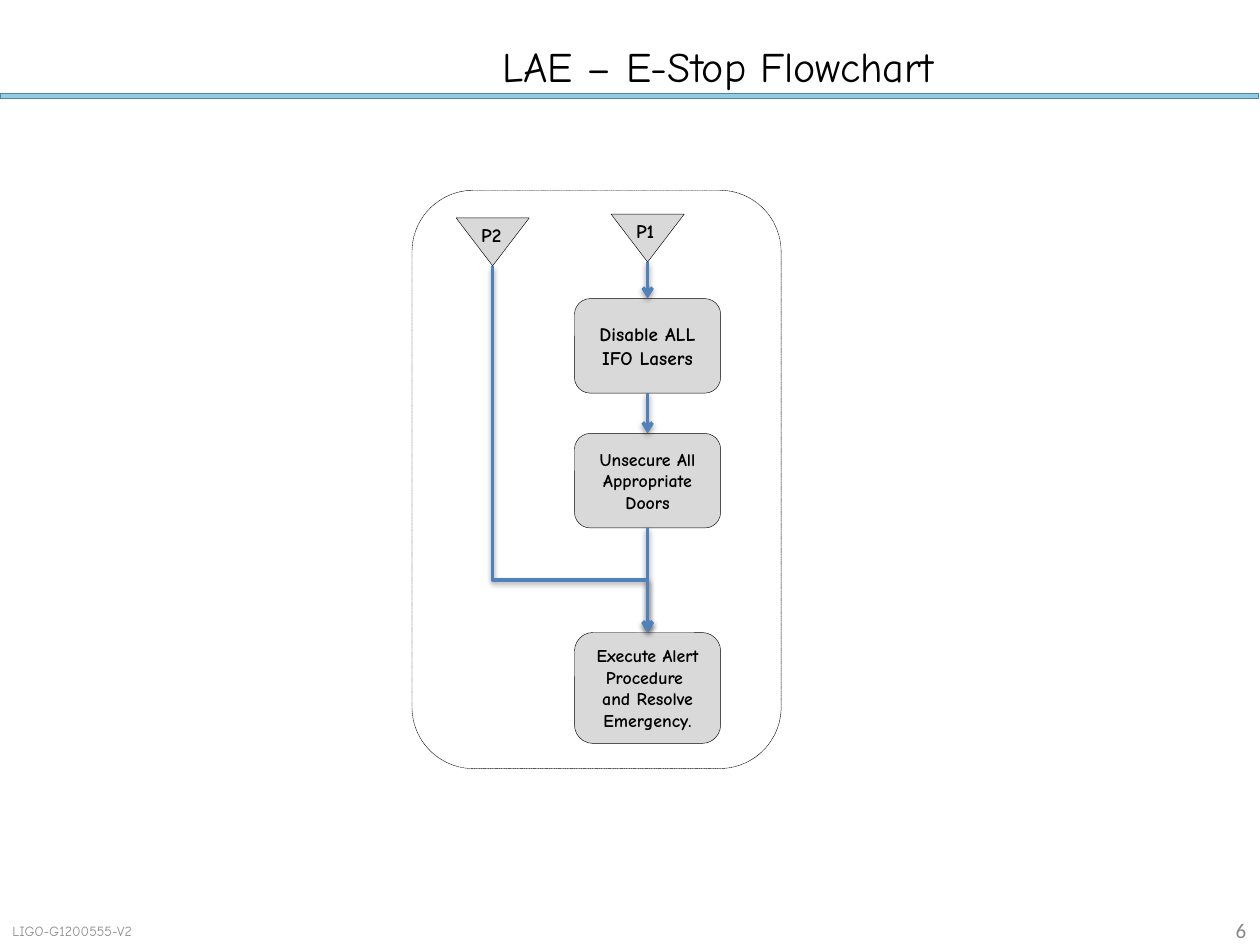
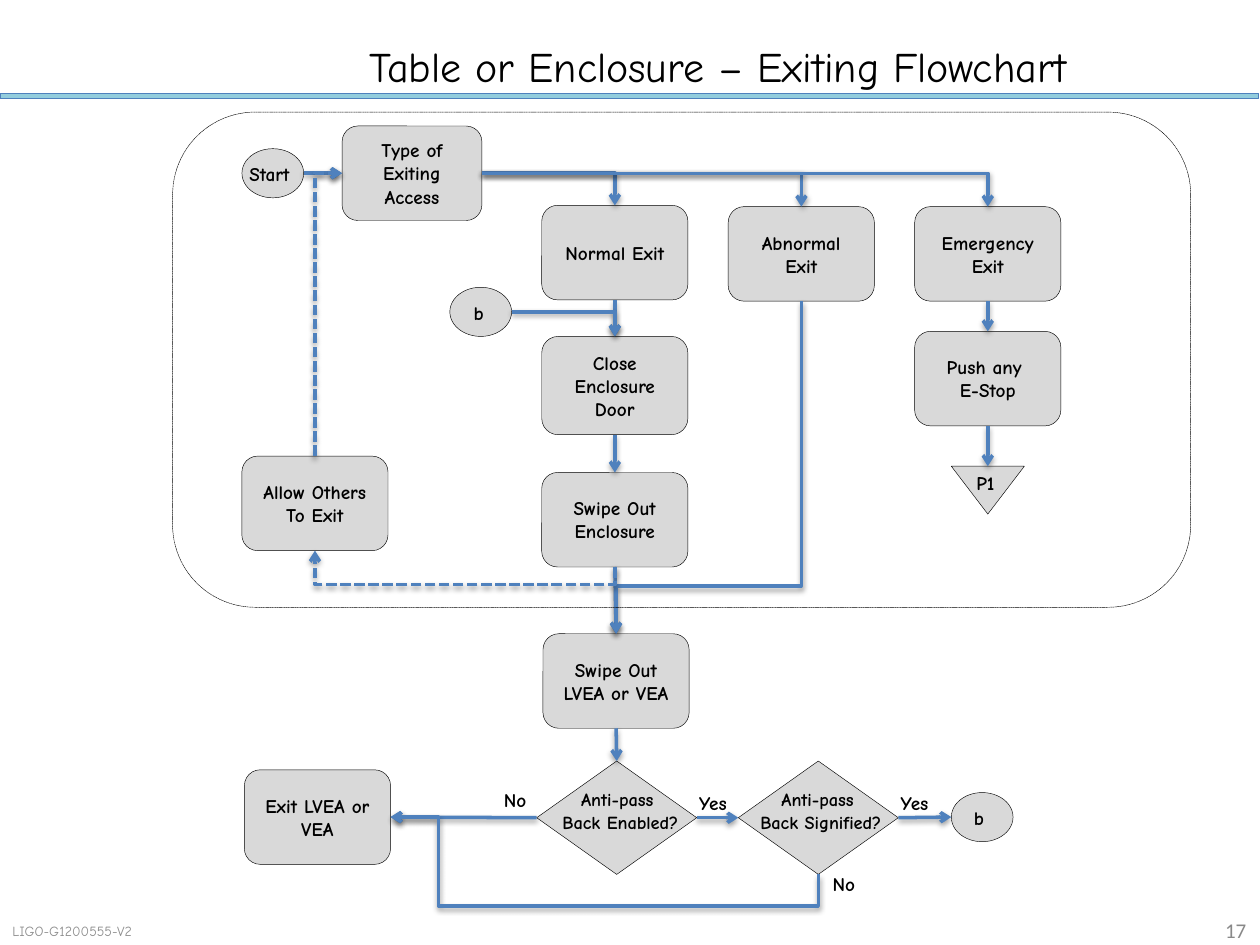
import collections

import lxml.etree
import pptx
import pptx.dml.color
import pptx.enum.dml
import pptx.enum.shapes
import pptx.enum.text
import pptx.oxml.ns
import pptx.util

SHAPE = pptx.enum.shapes.MSO_SHAPE
CONNECTOR = pptx.enum.shapes.MSO_CONNECTOR
ALIGN = pptx.enum.text.PP_ALIGN
ANCHOR = pptx.enum.text.MSO_ANCHOR
DASH = pptx.enum.dml.MSO_LINE.SQUARE_DOT
qn = pptx.oxml.ns.qn

COLUMNS, ROWS = 10, 7.5
BLACK, GREY, BLUE, SKY = "000000", "D9D9D9", "4F81BD", "93CDDD"
HAND, PLAIN = "Comic Neue", "Calibri"

Node = collections.namedtuple("Node", "left top right bottom")


def color(hex_string):
    return pptx.dml.color.RGBColor.from_string(hex_string)


class Flowchart:
    def __init__(self, deck):
        self.deck = deck
        self.slide = None

    def x(self, columns):
        return round(self.deck.slide_width * columns / COLUMNS)

    def y(self, rows):
        return round(self.deck.slide_height * rows / ROWS)

    def area(self, left, top, width, height):
        return self.x(left), self.y(top), self.x(width), self.y(height)

    def typeset(self, frame, text, size, hue=BLACK, font=HAND, bold=False,
                align=ALIGN.LEFT, anchor=ANCHOR.TOP, wrap=True):
        frame.text = text
        frame.word_wrap = wrap
        frame.vertical_anchor = anchor
        for paragraph in frame.paragraphs:
            paragraph.alignment = align
            for run in paragraph.runs:
                run.font.size = pptx.util.Pt(size)
                run.font.name = font
                run.font.bold = bold
                run.font.color.rgb = color(hue)

    def page(self, title, number):
        self.slide = self.deck.slides.add_slide(self.deck.slide_layouts[5])
        heading = self.slide.shapes.title
        heading.left, heading.top, heading.width, heading.height = self.area(1.89, 0.3, 7.61, 0.44)
        self.typeset(heading.text_frame, title, 24, align=ALIGN.CENTER, anchor=ANCHOR.MIDDLE)
        heading.text_frame.auto_size = pptx.enum.text.MSO_AUTO_SIZE.NONE
        self.shape(SHAPE.RECTANGLE, 0, 0.74, 9.99, 0.04, SKY, BLUE, 0.75)
        self.label(number, 9.26, 7.27, 0.73, 0.22, 12, hue="898989", font=PLAIN,
                   bold=False, align=ALIGN.RIGHT, anchor=ANCHOR.MIDDLE)
        self.label("LIGO-G1200555-V2", 0, 7.29, 1.39, 0.2, 8, hue="8C8C8C",
                   bold=False, anchor=ANCHOR.MIDDLE)

    def shape(self, kind, left, top, width, height, fill=GREY, line=BLACK, weight=0.25):
        shape = self.slide.shapes.add_shape(kind, *self.area(left, top, width, height))
        shape.shadow.inherit = False
        if fill:
            shape.fill.solid()
            shape.fill.fore_color.rgb = color(fill)
        else:
            shape.fill.background()
        shape.line.color.rgb = color(line)
        shape.line.width = pptx.util.Pt(weight)
        return shape

    def frame(self, left, top, width, height):
        border = self.shape(SHAPE.ROUNDED_RECTANGLE, left, top, width, height, fill=None)
        border.line.dash_style = DASH

    def label(self, text, left, top, width, height=0.29, size=11, bold=True, **style):
        box = self.slide.shapes.add_textbox(*self.area(left, top, width, height))
        self.typeset(box.text_frame, text, size, bold=bold, **style)

    def step(self, text, middle, top, width=1.16, height=0.75, size=11):
        left = middle - width / 2
        box = self.shape(SHAPE.ROUNDED_RECTANGLE, left, top, width, height)
        self.typeset(box.text_frame, text, size, bold=True, align=ALIGN.CENTER,
                     anchor=ANCHOR.MIDDLE)
        return self.node(left, top, width, height)

    def node(self, left, top, width, height):
        middle, center = left + width / 2, top + height / 2
        return Node((left, center), (middle, top), (left + width, center), (middle, top + height))

    def jump(self, text, middle, top):
        self.shape(SHAPE.FLOWCHART_MERGE, middle - 0.29, top, 0.58, 0.38)
        self.label(text, middle - 0.19, top - 0.01, 0.52)
        return self.node(middle - 0.29, top, 0.58, 0.38)

    def terminal(self, text, left, top, indent, width):
        self.shape(SHAPE.OVAL, left, top, 0.49, 0.39)
        self.label(text, left + indent, top + 0.06, width, wrap=False)
        return self.node(left, top, 0.49, 0.39)

    def decision(self, text, left, label_left, label_width):
        self.shape(SHAPE.DIAMOND, left, 6.04, 1.27, 0.9)
        self.label(text, label_left, 6.21, label_width, 0.45, 10.5, align=ALIGN.CENTER, wrap=False)
        return self.node(left, 6.04, 1.27, 0.9)

    def link(self, *points, dashed=False):
        (x0, y0), (x1, y1) = points[0], points[-1]
        bends = len(points) - 2
        upright = bends > 0 and abs(points[1][0] - x0) < 0.01
        along, across = (y1 - y0, x0 - x1) if upright else (x1 - x0, y1 - y0)
        middle, center = (x0 + x1) / 2, (y0 + y1) / 2
        arrow = self.slide.shapes.add_connector(
            CONNECTOR.ELBOW if bends else CONNECTOR.STRAIGHT,
            self.x(middle - along / 2), self.y(center - across / 2),
            self.x(middle + along / 2), self.y(center + across / 2))
        if upright:
            arrow.rotation = 90
        if bends:
            self.bend(arrow, points, bends, upright)
        arrow.line.color.rgb = color(BLUE)
        arrow.line.width = pptx.util.Pt(2)
        if dashed:
            arrow.line.dash_style = DASH
        properties = arrow.element.spPr
        lxml.etree.SubElement(properties.find(qn("a:ln")), qn("a:tailEnd"), type="arrow")
        effects = lxml.etree.SubElement(properties, qn("a:effectLst"))
        shadow = lxml.etree.SubElement(effects, qn("a:outerShdw"), blurRad="40000", dist="20000",
                                       dir="5400000", rotWithShape="0")
        tint = lxml.etree.SubElement(shadow, qn("a:srgbClr"), val=BLACK)
        lxml.etree.SubElement(tint, qn("a:alpha"), val="38000")

    def bend(self, arrow, points, bends, upright):
        geometry = arrow.element.spPr.find(qn("a:prstGeom"))
        geometry.set("prst", f"bentConnector{bends + 1}")
        guides = geometry.find(qn("a:avLst"))
        if guides is None:
            guides = lxml.etree.SubElement(geometry, qn("a:avLst"))
        for turn in range(1, bends):
            axis = (turn + upright + 1) % 2
            start, end = points[0][axis], points[-1][axis]
            share = (points[turn][axis] - start) / (end - start)
            lxml.etree.SubElement(guides, qn("a:gd"), name=f"adj{turn}",
                                  fmla=f"val {round(share * 100000)}")


def emergency_stop(chart):
    chart.page("LAE – E-Stop Flowchart", "6")
    main_lane, bypass_lane = 5.14, 3.91
    disable = chart.step("Disable ALL IFO Lasers", main_lane, 2.37)
    unsecure = chart.step("Unsecure All Appropriate Doors", main_lane, 3.44, size=10.2)
    execute = chart.step("Execute Alert Procedure \nand Resolve Emergency.", main_lane, 5.02,
                         height=0.88, size=10.2)
    p1 = chart.jump("P1", main_lane, 1.7)
    p2 = chart.jump("P2", bypass_lane, 1.73)
    for source, target in ((p1, disable), (disable, unsecure), (unsecure, execute)):
        chart.link(source.bottom, target.top)
    chart.link(p2.bottom, (bypass_lane, 4.6), (main_lane, 4.6), execute.top)
    chart.frame(3.27, 1.51, 2.93, 4.59)


def exiting(chart):
    chart.page("Table or Enclosure – Exiting Flowchart", "17")
    main_lane, abnormal_lane, emergency_lane = (4.88 + 1.48 * lane for lane in range(3))
    side_lane, merge_row = 2.5, 4.65

    access = chart.step("Type of Exiting Access", 3.27, 1, width=1.11)
    normal = chart.step("Normal Exit", main_lane, 1.63)
    abnormal = chart.step("Abnormal Exit", abnormal_lane, 1.64)
    emergency = chart.step("Emergency Exit", emergency_lane, 1.64)
    close = chart.step("Close Enclosure Door", main_lane, 2.67, height=0.78)
    allow = chart.step("Allow Others To Exit", side_lane, 3.62)
    swipe_enclosure = chart.step("Swipe Out Enclosure", main_lane, 3.75)
    swipe_area = chart.step("Swipe Out LVEA or VEA", main_lane + 0.01, 5.03)
    leave = chart.step("Exit LVEA or VEA", side_lane + 0.02, 6.11)
    push = chart.step("Push any \nE-Stop", emergency_lane, 2.63)
    p1 = chart.jump("P1", emergency_lane, 3.7)
    start = chart.terminal("Start", 1.92, 1.18, -0.04, 0.61)
    b_in = chart.terminal("b", 3.57, 2.28, 0.09, 0.29)
    b_out = chart.terminal("b", 7.55, 6.29, 0.08, 0.29)
    enabled = chart.decision("Anti-pass \nBack Enabled?", 4.26, 4.31, 1.23)
    signified = chart.decision("Anti-pass \nBack Signified?", 5.86, 5.86, 1.31)

    for text, left, top, width in (("Yes", 5.45, 6.23, 0.52), ("Yes", 7.05, 6.23, 0.52),
                                   ("No", 3.9, 6.21, 0.41), ("No", 6.51, 6.87, 0.41)):
        chart.label(text, left, top, width, wrap=width > 0.5)

    for branch in (normal, abnormal, emergency):
        chart.link(access.right, (branch.top[0], access.right[1]), branch.top)
    for source, target in ((normal, close), (close, swipe_enclosure), (swipe_enclosure, swipe_area),
                           (swipe_area, enabled), (emergency, push), (push, p1)):
        chart.link(source.bottom, target.top)
    for source, target in ((start, access), (enabled, signified), (signified, b_out)):
        chart.link(source.right, target.left)
    chart.link(enabled.left, leave.right)
    chart.link(b_in.right, (main_lane, b_in.right[1]), close.top)
    chart.link(abnormal.bottom, (abnormal_lane, merge_row), (swipe_area.top[0], merge_row),
               swipe_area.top)
    chart.link(swipe_enclosure.bottom, (main_lane, merge_row - 0.01),
               (side_lane, merge_row - 0.01), allow.bottom, dashed=True)
    chart.link(allow.top, (side_lane, access.left[1]), access.left, dashed=True)
    chart.link(signified.bottom, (signified.bottom[0], 7.19), (3.48, 7.19),
               (3.48, leave.right[1]), leave.right)
    chart.frame(1.37, 0.89, 8.08, 3.93)


def main():
    deck = pptx.Presentation()
    deck.slide_width = pptx.util.Inches(COLUMNS)
    deck.slide_height = pptx.util.Inches(ROWS)
    chart = Flowchart(deck)
    emergency_stop(chart)
    exiting(chart)
    deck.save("out.pptx")


if __name__ == "__main__":
    main()
